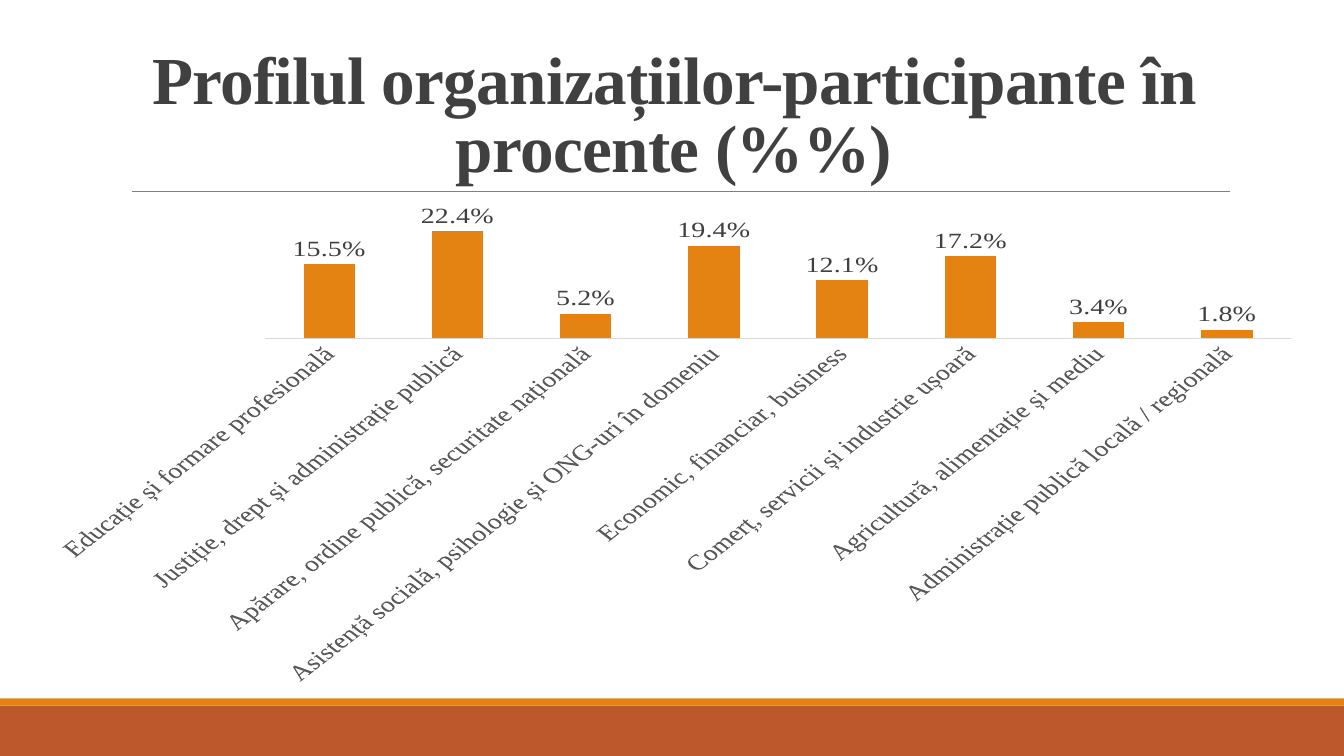
from lxml import etree
from pptx import Presentation
from pptx.chart.data import CategoryChartData
from pptx.dml.color import RGBColor
from pptx.enum.chart import XL_CHART_TYPE, XL_LABEL_POSITION, XL_TICK_MARK
from pptx.enum.shapes import MSO_CONNECTOR, MSO_SHAPE
from pptx.enum.text import MSO_ANCHOR, MSO_AUTO_SIZE, PP_ALIGN
from pptx.oxml.ns import qn
from pptx.util import Inches, Pt

COLUMNS = XL_CHART_TYPE.COLUMN_CLUSTERED
OUTSIDE_END = XL_LABEL_POSITION.OUTSIDE_END
NO_TICK = XL_TICK_MARK.NONE
STRAIGHT = MSO_CONNECTOR.STRAIGHT
RECTANGLE = MSO_SHAPE.RECTANGLE
BOTTOM = MSO_ANCHOR.BOTTOM
FIXED_SIZE = MSO_AUTO_SIZE.NONE
CENTER = PP_ALIGN.CENTER

FONT = "Times New Roman"
PERCENT = "0.0%"
WIDTH, HEIGHT = 13.33, 7.5
COLORS = {
    "band": "BD582C",
    "accent": "E48312",
    "rule": "808080",
    "title": "404040",
    "chart": "000000",
    "category": "595959",
    "axis": "D9D9D9",
}
PROFILES = {
    "Educație și formare profesională": 0.155,
    "Justiție, drept și administrație publică": 0.224,
    "Apărare, ordine publică, securitate națională": 0.052,
    "Asistență socială, psihologie și ONG-uri în domeniu": 0.194,
    "Economic, financiar, business": 0.121,
    "Comerț, servicii și industrie ușoară": 0.172,
    "Agricultură, alimentație și mediu": 0.034,
    "Administrație publică locală / regională": 0.018,
}


def color(name):
    return RGBColor.from_string(COLORS[name])


def style_font(font, size, color_name, bold=False):
    font.name = FONT
    font.size = Pt(size)
    font.bold = bold
    font.color.rgb = color(color_name)


def write_text(frame, text, size, color_name, bold=False, align=CENTER,
               line_spacing=1.0, tracking=0):
    """Fill the frame with one paragraph; tracking is in points."""
    para = frame.paragraphs[0]
    para.alignment = align
    para.line_spacing = line_spacing
    span = para.add_run()
    span.text = text
    style_font(span.font, size, color_name, bold)
    span.font._element.set("spc", str(round(tracking * 100)))


def add_bar(page, left, top, width, height, color_name):
    bar = page.shapes.add_shape(RECTANGLE, Inches(left), Inches(top),
                                Inches(width), Inches(height))
    bar.shadow.inherit = False
    bar.fill.solid()
    bar.fill.fore_color.rgb = color(color_name)
    bar.line.fill.background()


def add_footer(page, left, top, width, height, stripe=0.07):
    add_bar(page, left, top + stripe, width, height - stripe, "band")
    add_bar(page, left, top, width, stripe, "accent")


def add_title(page, left, top, width, height):
    """Place the title with the rule along its bottom edge."""
    bottom = Inches(top + height)
    rule = page.shapes.add_connector(STRAIGHT, Inches(left + 1), bottom,
                                     Inches(left + width - 0.86), bottom)
    rule.line.color.rgb = color("rule")
    rule.line.width = Pt(0.5)
    etree.SubElement(rule._element.spPr, qn("a:effectLst"))

    title = page.shapes.title
    title.left, title.top = Inches(left), Inches(top)
    title.width, title.height = Inches(width), Inches(height)
    frame = title.text_frame
    frame.word_wrap = True
    frame.auto_size = FIXED_SIZE
    frame.vertical_anchor = BOTTOM
    write_text(frame, "Profilul organizațiilor-participante în procente (%%)",
               size=48, color_name="title", bold=True, line_spacing=0.85,
               tracking=-0.5)


def add_profile_chart(page, left, top, width, height):
    data = CategoryChartData(number_format=PERCENT)
    data.categories = list(PROFILES)
    data.add_series("Series 1", list(PROFILES.values()))
    chart = page.shapes.add_chart(COLUMNS, Inches(left), Inches(top),
                                  Inches(width), Inches(height), data).chart
    chart.has_title = False
    chart.has_legend = False
    style_font(chart.font, 20, "chart")

    values = chart.value_axis
    values.visible = False
    values.has_major_gridlines = False
    values.minimum_scale = 0
    values.tick_labels.number_format = PERCENT
    values.tick_labels.number_format_is_linked = False

    categories = chart.category_axis
    categories.major_tick_mark = NO_TICK
    categories.minor_tick_mark = NO_TICK
    categories.format.line.color.rgb = color("axis")
    categories.format.line.width = Pt(0.75)
    style_font(categories.tick_labels.font, 20, "category")
    label_body = categories._element.find(qn("c:txPr")).find(qn("a:bodyPr"))
    label_body.set("rot", str(-45 * 60000))

    plot = chart.plots[0]
    plot.gap_width = 150
    plot.overlap = -25
    plot.vary_by_categories = False
    plot.has_data_labels = True
    labels = plot.data_labels
    labels.show_value = True
    labels.position = OUTSIDE_END
    labels.number_format = PERCENT
    labels.number_format_is_linked = False
    style_font(labels.font, 20, "title")

    columns = plot.series[0]
    columns.invert_if_negative = False
    columns.format.fill.solid()
    columns.format.fill.fore_color.rgb = color("accent")


def main():
    deck = Presentation()
    deck.slide_width, deck.slide_height = Inches(WIDTH), Inches(HEIGHT)
    page = deck.slides.add_slide(deck.slide_layouts.get_by_name("Title Only"))
    add_footer(page, 0, 6.93, WIDTH, HEIGHT - 6.93)
    add_title(page, 0.31, 0.31, 12.75, 1.59)
    add_profile_chart(page, 0.31, 2.02, 12.75, 4.78)
    deck.save("out.pptx")


if __name__ == "__main__":
    main()
